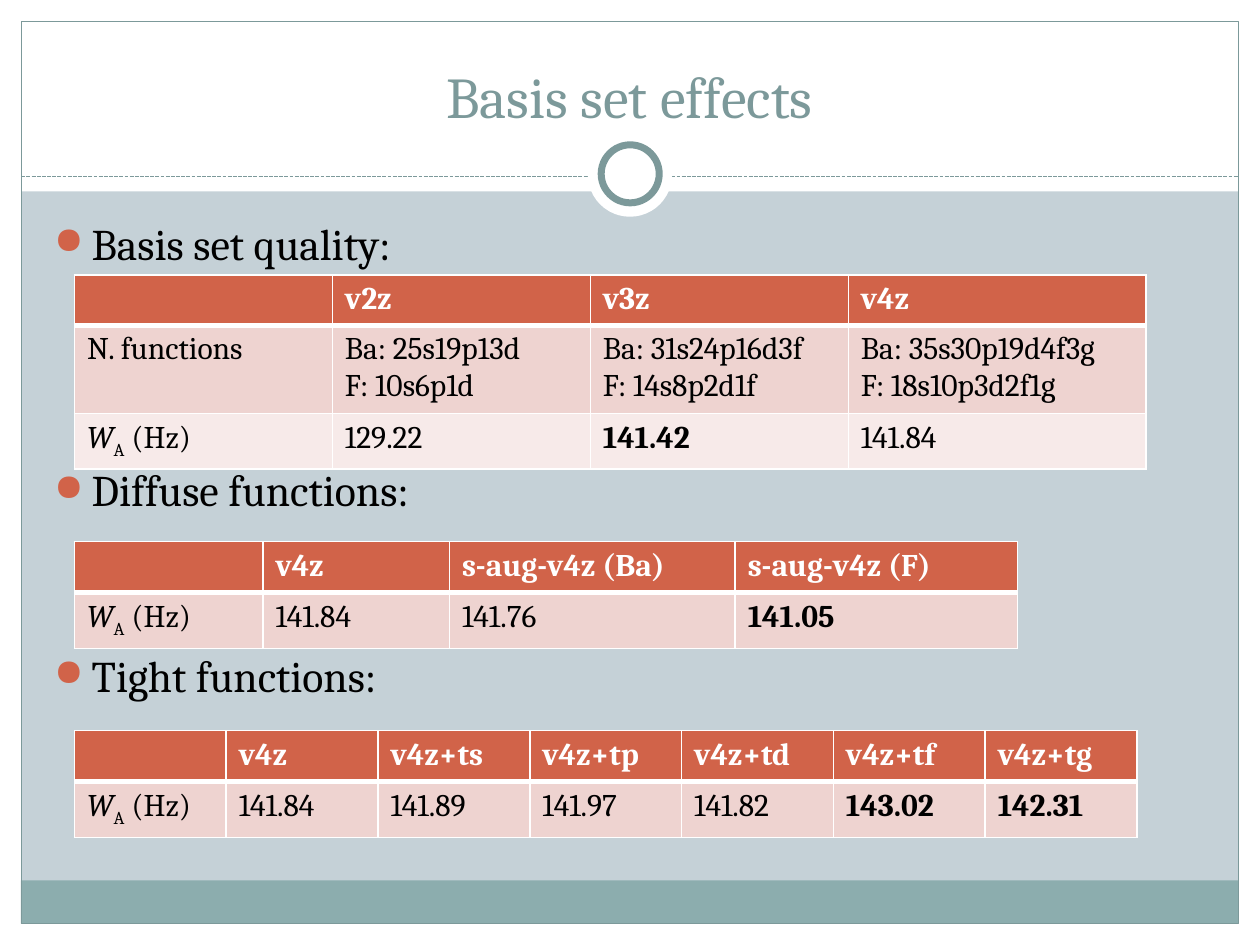
import dataclasses
import typing

import lxml.etree
import pptx
import pptx.dml.color
import pptx.enum.dml
import pptx.enum.shapes
import pptx.enum.text
import pptx.oxml.ns
import pptx.util

Cm, Pt = pptx.util.Cm, pptx.util.Pt
KIND = pptx.enum.shapes.MSO_SHAPE
qn = pptx.oxml.ns.qn


@dataclasses.dataclass(frozen=True)
class Theme:
    font: str = "Cambria"
    back: str = "C5D1D7"
    white: str = "FFFFFF"
    black: str = "000000"
    teal: str = "7C999A"
    foot: str = "8CADAE"
    head: str = "D16349"
    bands: tuple[str, str] = ("EED3D0", "F7EAE9")
    title: float = 33
    body: float = 25
    cell: float = 18


@dataclasses.dataclass(frozen=True)
class Panel:
    box: tuple[float, float, float, float]
    fill: typing.Optional[str] = None
    line: typing.Optional[str] = None
    width: float = 0.75
    kind: KIND = KIND.RECTANGLE


@dataclasses.dataclass(frozen=True)
class Grid:
    top: float
    cols: list[float]
    rows: list[float]
    cells: list[list[str]]


THEME = Theme()
LEFT = 1.5
WA = "W|A| (Hz)"  # italic | subscript | plain
# A leading * marks a bold value

PANELS = [
    Panel((0, 18.62, 25.4, 0.43), THEME.white),
    Panel((0, 0, 25.4, 3.86), THEME.white),
    Panel((0, 0, 0.43, 19.05), THEME.white),
    Panel((24.97, 0, 0.43, 19.05), THEME.white),
    Panel((0.42, 17.75, 24.54, 0.87), THEME.foot),
    Panel((0.43, 0.43, 24.54, 18.19), line=THEME.teal),
]
RINGS = [
    Panel((11.85, 2.67, 1.7, 1.7), THEME.white, kind=KIND.OVAL),
    Panel((12.12, 2.92, 1.17, 1.17), THEME.white, THEME.teal, 4, KIND.OVAL),
]
# Bullet text and the space before it, in points
BULLETS = [
    ("Basis set quality:", 2),
    ("Diffuse functions:", 111),
    ("Tight functions:", 76),
]
GRIDS = [
    Grid(5.54, [5.2, 5.2, 5.2, 6], [1, 1.73, 1.05], [
        ["", "v2z", "v3z", "v4z"],
        ["N. functions", "Ba: 25s19p13d\nF: 10s6p1d",
         "Ba: 31s24p16d3f\nF: 14s8p2d1f", "Ba: 35s30p19d4f3g\nF: 18s10p3d2f1g"],
        [WA, "129.22", "*141.42", "141.84"],
    ]),
    Grid(10.92, [3.8, 3.76, 5.76, 5.69], [1.03] * 2, [
        ["", "v4z", "s-aug-v4z (Ba)", "s-aug-v4z (F)"],
        [WA, "141.84", "141.76", "*141.05"],
    ]),
    Grid(14.73, [3.06] * 7, [1.03] * 2, [
        ["", "v4z", "v4z+ts", "v4z+tp", "v4z+td", "v4z+tf", "v4z+tg"],
        [WA, "141.84", "141.89", "141.97", "141.82", "*143.02", "*142.31"],
    ]),
]


def rgb(code: str) -> pptx.dml.color.RGBColor:
    return pptx.dml.color.RGBColor.from_string(code)


def style(para, size: float, color: str, bold: bool = False) -> None:
    font = para.font
    font.name, font.size, font.bold = THEME.font, Pt(size), bold
    font.color.rgb = rgb(color)


def draw_panel(slide, panel: Panel) -> None:
    shape = slide.shapes.add_shape(panel.kind, *map(Cm, panel.box))
    shape.shadow.inherit = False
    if panel.fill:
        shape.fill.solid()
        shape.fill.fore_color.rgb = rgb(panel.fill)
    else:
        shape.fill.background()
    if panel.line:
        shape.line.color.rgb = rgb(panel.line)
        shape.line.width = Pt(panel.width)
    else:
        shape.line.fill.background()


def draw_rule(slide) -> None:
    rule = slide.shapes.add_connector(
        pptx.enum.shapes.MSO_CONNECTOR.STRAIGHT,
        Cm(0.43), Cm(3.56), Cm(24.97), Cm(3.56))
    rule.line.color.rgb = rgb(THEME.teal)
    rule.line.width = Pt(0.75)
    rule.line.dash_style = pptx.enum.dml.MSO_LINE.SQUARE_DOT
    lxml.etree.SubElement(rule._element.spPr, qn("a:effectLst"))


def draw_title(slide, text: str) -> None:
    title = slide.shapes.title
    title.left, title.top, title.width, title.height = map(
        Cm, (0.84, 0.64, 23.7, 2.11))
    title.text = text
    title.text_frame.vertical_anchor = pptx.enum.text.MSO_ANCHOR.BOTTOM
    para = title.text_frame.paragraphs[0]
    para.alignment = pptx.enum.text.PP_ALIGN.CENTER
    style(para, THEME.title, THEME.teal)
    slide.shapes._spTree.append(title._element)  # in front of the panels


def draw_bullets(slide) -> None:
    frame = slide.shapes.add_textbox(
        *map(Cm, (0.84, 4.24, 23.62, 12.7))).text_frame
    frame.word_wrap = True
    frame.text = "\n".join(text for text, _ in BULLETS)
    for para, (_, gap) in zip(frame.paragraphs, BULLETS):
        style(para, THEME.body, THEME.black)
        para.space_before = Pt(gap)
        props = para._p.get_or_add_pPr()
        props.set("marL", str(Cm(0.76)))
        props.set("indent", str(Cm(-0.76)))
        color = lxml.etree.Element(qn("a:buClr"))
        lxml.etree.SubElement(color, qn("a:srgbClr"), val=THEME.head)
        size = lxml.etree.Element(qn("a:buSzPct"), val="85000")
        mark = lxml.etree.Element(qn("a:buChar"), char="●")
        last = props.find(qn("a:defRPr"))
        for node in (color, size, mark):
            last.addprevious(node)


def set_edges(cell, top: float, base: float) -> None:
    props = cell._tc.get_or_add_tcPr()
    widths = {"lnL": 1, "lnR": 1, "lnT": top, "lnB": base}
    for spot, (name, width) in enumerate(widths.items()):
        edge = lxml.etree.Element(qn("a:" + name), w=str(Pt(width)))
        fill = lxml.etree.SubElement(edge, qn("a:solidFill"))
        lxml.etree.SubElement(fill, qn("a:srgbClr"), val=THEME.white)
        props.insert(spot, edge)


def fill_cell(cell, text: str, row: int) -> None:
    cell.fill.solid()
    cell.fill.fore_color.rgb = rgb(
        THEME.bands[(row - 1) % 2] if row else THEME.head)
    set_edges(cell, 3 if row == 1 else 1, 1 if row else 3)
    frame = cell.text_frame
    if text == WA:
        runs = [frame.paragraphs[0].add_run() for _ in range(3)]
        for run, part in zip(runs, WA.split("|")):
            run.text = part
        runs[0].font.italic = True
        runs[1]._r.get_or_add_rPr().set("baseline", "-25000")
    else:
        frame.text = text.lstrip("*")
    for para in frame.paragraphs:
        style(para, THEME.cell, THEME.black if row else THEME.white,
              row == 0 or text.startswith("*"))


def draw_grid(slide, grid: Grid) -> None:
    table = slide.shapes.add_table(
        len(grid.rows), len(grid.cols), Cm(LEFT), Cm(grid.top),
        Cm(sum(grid.cols)), Cm(sum(grid.rows))).table
    for col, width in zip(table.columns, grid.cols):
        col.width = Cm(width)
    for row, height in enumerate(grid.rows):
        table.rows[row].height = Cm(height)
        for col, text in enumerate(grid.cells[row]):
            fill_cell(table.cell(row, col), text, row)


def main() -> None:
    deck = pptx.Presentation()
    deck.slide_width, deck.slide_height = Cm(25.4), Cm(19.05)
    slide = deck.slides.add_slide(deck.slide_layouts[5])
    slide.background.fill.solid()
    slide.background.fill.fore_color.rgb = rgb(THEME.back)
    # Frame, dashed rule and ring
    for panel in PANELS:
        draw_panel(slide, panel)
    draw_rule(slide)
    for ring in RINGS:
        draw_panel(slide, ring)
    # Title, bullets and tables
    draw_title(slide, "Basis set effects")
    draw_bullets(slide)
    for grid in GRIDS:
        draw_grid(slide, grid)
    deck.save("out.pptx")


if __name__ == "__main__":
    main()
